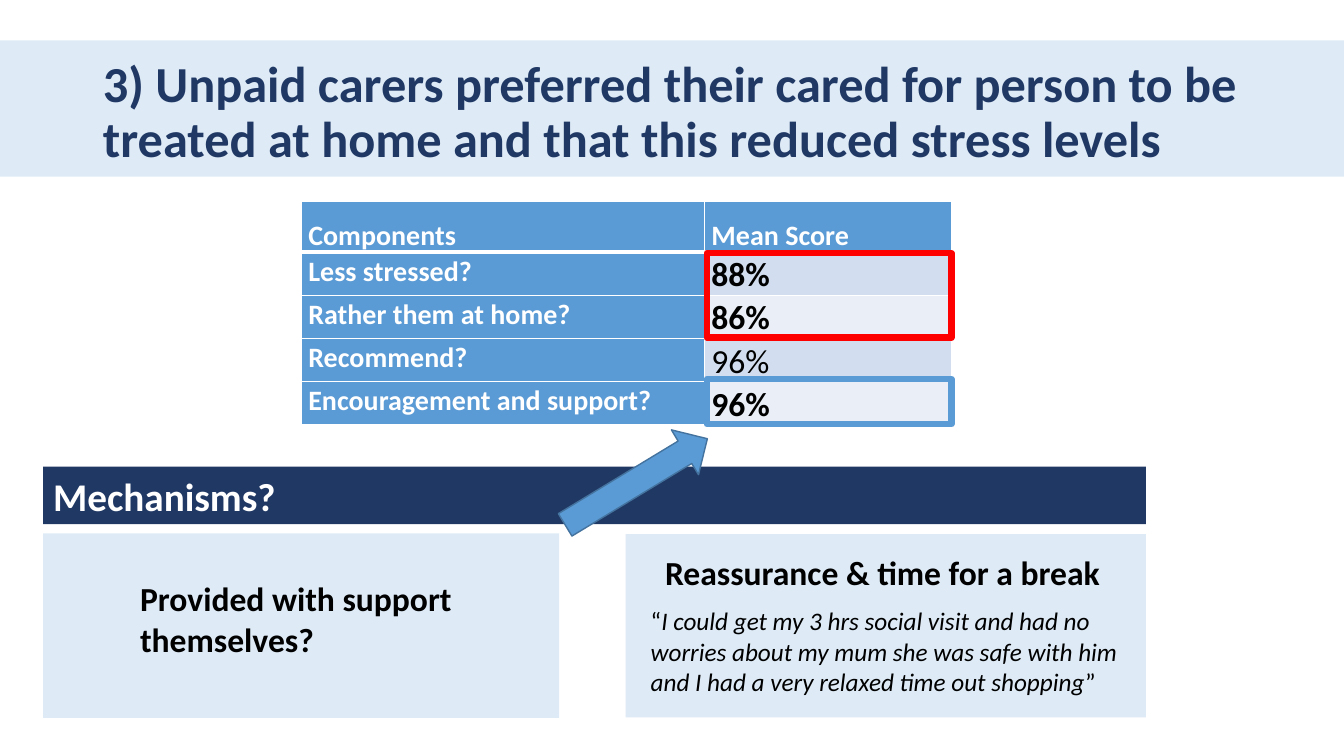
from typing import NamedTuple, Optional

from lxml.etree import SubElement
from pptx import Presentation
from pptx.dml.color import RGBColor
from pptx.enum.shapes import MSO_SHAPE
from pptx.enum.text import MSO_ANCHOR, MSO_AUTO_SIZE, PP_ALIGN
from pptx.oxml.ns import qn
from pptx.shapes.autoshape import Shape
from pptx.slide import Slide
from pptx.table import _Cell
from pptx.text.text import TextFrame
from pptx.util import Cm, Pt

FONT = "Calibri"
NAVY = RGBColor(0x20, 0x38, 0x64)
BLUE = RGBColor(0x5B, 0x9B, 0xD5)
ARROW_EDGE = RGBColor(0x43, 0x73, 0x9E)
PALE_BLUE = RGBColor(0xDE, 0xEB, 0xF7)
ROW_TINTS = (RGBColor(0xD2, 0xDE, 0xEF), RGBColor(0xEA, 0xEF, 0xF7))
RED = RGBColor(0xFF, 0x00, 0x00)
WHITE = RGBColor(0xFF, 0xFF, 0xFF)
BLACK = RGBColor(0x00, 0x00, 0x00)


class Box(NamedTuple):
    """Left, top, width and height in centimetres."""
    left: float
    top: float
    width: float
    height: float


class Block(NamedTuple):
    box: Box
    fill: Optional[RGBColor] = None
    line: Optional[RGBColor] = None
    line_width: float = 4.5
    preset: MSO_SHAPE = MSO_SHAPE.RECTANGLE
    rotation: float = 0


class Caption(NamedTuple):
    box: Box
    text: str
    size: float = 24
    bold: bool = True
    italic: bool = False


class Score(NamedTuple):
    component: str
    mean: str
    bold: bool = True


PANELS = (
    Block(Box(15.77, 13.46, 13.11, 4.62), PALE_BLUE),
    Block(Box(1.09, 13.44, 13, 4.65), PALE_BLUE),
    Block(Box(0, 1.02, 33.87, 3.43), PALE_BLUE),
)
HIGHLIGHTS = (
    Block(Box(17.81, 9.55, 6.17, 1.14), line=BLUE),
    Block(Box(17.81, 6.38, 6.17, 2.13), line=RED),
)
MECHANISMS_BAR = Block(Box(1.09, 11.76, 27.79, 1.45), NAVY)
ARROW = Block(Box(13.94, 11.48, 4.19, 1.32), BLUE, ARROW_EDGE, 1,
              MSO_SHAPE.RIGHT_ARROW, -31.2)
CAPTIONS = (
    Caption(Box(16.15, 15.14, 12.8, 2.57),
            "“I could get my 3 hrs social visit and had no worries about my mum "
            "she was safe with him and I had a very relaxed time out shopping”",
            18, bold=False, italic=True),
    Caption(Box(16.51, 13.79, 12.12, 1.27), "Reassurance & time for a break"),
    Caption(Box(3.28, 14.45, 9.09, 2.31), "Provided with support themselves?"),
)
TABLE_BOX = Box(7.59, 5.08, 16.38, 5.56)
COLUMN_WIDTHS = (10.16, 6.22)
HEADER_HEIGHT, ROW_HEIGHT = 1.24, 1.08
HEADINGS = ("Components", "Mean Score")
SCORES = (
    Score("Less stressed?", "88%"),
    Score("Rather them at home?", "86%"),
    Score("Recommend?", "96%", bold=False),
    Score("Encouragement and support?", "96%"),
)


def write_text(frame: TextFrame, text: str, *, size: float, color: RGBColor = BLACK,
               bold: bool = True, italic: bool = False, spacing: float = 1.0,
               align: PP_ALIGN = PP_ALIGN.LEFT) -> None:
    """Fill a frame with one paragraph; quotation marks around italics stay upright."""
    frame.word_wrap = True
    paragraph = frame.paragraphs[0]
    paragraph.alignment = align
    paragraph.line_spacing = spacing
    parts = [(text, italic)]
    if italic and text.startswith("“"):
        parts = [(text[0], False), (text[1:-1], True), (text[-1], False)]
    for part, slanted in parts:
        run = paragraph.add_run()
        run.text = part
        font = run.font
        font.name, font.size = FONT, Pt(size)
        font.bold, font.italic = bold, slanted
        font.color.rgb = color


def add_block(slide: Slide, block: Block) -> Shape:
    shape = slide.shapes.add_shape(block.preset, *map(Cm, block.box))
    shape.shadow.inherit = False
    shape.rotation = block.rotation
    if block.fill is None:
        shape.fill.background()
    else:
        shape.fill.solid()
        shape.fill.fore_color.rgb = block.fill
    if block.line is None:
        shape.line.fill.background()
    else:
        shape.line.color.rgb = block.line
        shape.line.width = Pt(block.line_width)
    return shape


def add_caption(slide: Slide, caption: Caption) -> None:
    frame = slide.shapes.add_textbox(*map(Cm, caption.box)).text_frame
    write_text(frame, caption.text, size=caption.size, bold=caption.bold,
               italic=caption.italic)


def add_title(slide: Slide, text: str) -> None:
    title = slide.shapes.title
    title.left, title.top, title.width, title.height = map(Cm, (2.34, 1.02, 29.21, 3.68))
    frame = title.text_frame
    frame.auto_size = MSO_AUTO_SIZE.NONE
    frame.vertical_anchor = MSO_ANCHOR.MIDDLE
    write_text(frame, text, size=36, color=NAVY, spacing=0.9)
    title.element.getparent().append(title.element)  # in front of its band


def set_borders(cell: _Cell, *, top: float, bottom: float) -> None:
    properties = cell._tc.get_or_add_tcPr()
    for side, width in (("L", 1), ("R", 1), ("T", top), ("B", bottom)):
        line = SubElement(properties, qn(f"a:ln{side}"), w=str(Pt(width)))
        fill = SubElement(line, qn("a:solidFill"))
        SubElement(fill, qn("a:srgbClr"), val=str(WHITE))


def format_cell(cell: _Cell, text: str, *, fill: RGBColor, size: float,
                color: RGBColor, bold: bool, row: int) -> None:
    set_borders(cell, top=3 if row == 1 else 1, bottom=3 if row == 0 else 1)
    cell.fill.solid()
    cell.fill.fore_color.rgb = fill
    cell.margin_left = cell.margin_right = Cm(0.18)
    cell.margin_top = cell.margin_bottom = 0
    write_text(cell.text_frame, text, size=size, color=color, bold=bold,
               spacing=1.5 if row == 0 else 1.07, align=PP_ALIGN.JUSTIFY)


def add_score_table(slide: Slide) -> None:
    table = slide.shapes.add_table(len(SCORES) + 1, len(HEADINGS),
                                   *map(Cm, TABLE_BOX)).table
    for column, width in zip(table.columns, COLUMN_WIDTHS):
        column.width = Cm(width)
    for index, row in enumerate(table.rows):
        row.height = Cm(ROW_HEIGHT if index else HEADER_HEIGHT)
    for index, heading in enumerate(HEADINGS):
        format_cell(table.cell(0, index), heading, fill=BLUE, size=20,
                    color=WHITE, bold=True, row=0)
    for row, score in enumerate(SCORES, start=1):
        format_cell(table.cell(row, 0), score.component, fill=BLUE, size=20,
                    color=WHITE, bold=True, row=row)
        format_cell(table.cell(row, 1), score.mean, fill=ROW_TINTS[(row - 1) % 2],
                    size=24, color=BLACK, bold=score.bold, row=row)


def main() -> None:
    presentation = Presentation()
    presentation.slide_width, presentation.slide_height = Cm(33.87), Cm(19.05)
    slide = presentation.slides.add_slide(presentation.slide_layouts[5])
    for panel in PANELS:
        add_block(slide, panel)
    add_title(slide, "3) Unpaid carers preferred their cared for person to be "
                     "treated at home and that this reduced stress levels")
    for caption in CAPTIONS:
        add_caption(slide, caption)
    add_score_table(slide)
    for highlight in HIGHLIGHTS:
        add_block(slide, highlight)
    mechanisms = add_block(slide, MECHANISMS_BAR)
    write_text(mechanisms.text_frame, "Mechanisms?", size=28, color=WHITE)
    add_block(slide, ARROW)
    presentation.save("out.pptx")


if __name__ == "__main__":
    main()
